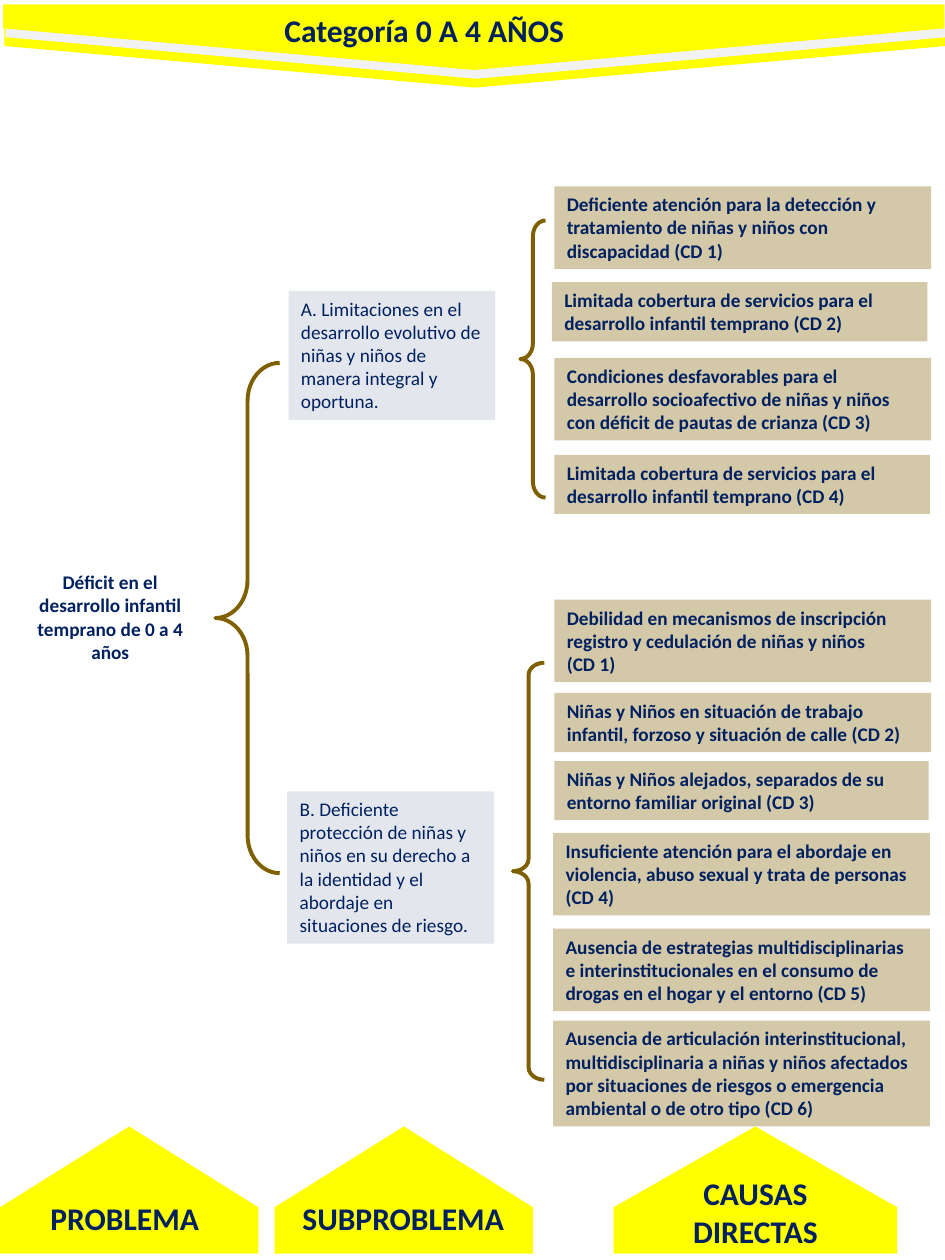
import dataclasses

import pptx
import pptx.dml.color
import pptx.enum.shapes
import pptx.enum.text
import pptx.oxml
import pptx.oxml.ns
import pptx.util

SHAPE = pptx.enum.shapes.MSO_SHAPE
ALIGN = pptx.enum.text.PP_ALIGN
ANCHOR = pptx.enum.text.MSO_ANCHOR
COLUMNS, ROWS = 75, 100


@dataclasses.dataclass(frozen=True)
class Theme:
    font: str = "Calibri"
    navy: str = "002060"
    brown: str = "7F6000"
    yellow: str = "FFFF00"
    pale: str = "F2F2F2"
    body: int = 11
    heading: int = 18
    brace_line: float = 2.25


class TreePage:
    """Places elements on a grid of 75 columns by 100 rows."""

    def __init__(self, deck, theme):
        self.theme = theme
        self.column = deck.slide_width / COLUMNS
        self.row = deck.slide_height / ROWS
        self.page = deck.slides.add_slide(deck.slide_layouts[6])

    def frame(self, left, top, width, height):
        return (round(left * self.column), round(top * self.row),
                round(width * self.column), round(height * self.row))

    def shape(self, kind, area, fill=None, opacity=100, adjustments=()):
        box = self.page.shapes.add_shape(kind, *self.frame(*area))
        box.shadow.inherit = False
        box.line.fill.background()
        for index, value in enumerate(adjustments):
            box.adjustments[index] = value
        if fill is None:
            box.fill.background()
            return box
        box.fill.solid()
        box.fill.fore_color.rgb = pptx.dml.color.RGBColor.from_string(fill)
        if opacity < 100:
            color = box.element.spPr.find(
                f'{pptx.oxml.ns.qn("a:solidFill")}/{pptx.oxml.ns.qn("a:srgbClr")}')
            color.append(pptx.oxml.parse_xml(
                f'<a:alpha {pptx.oxml.ns.nsdecls("a")} val="{opacity * 1000}"/>'))
        return box

    def add_text(self, box, text, size, bold=True, align=ALIGN.LEFT):
        body = box.text_frame
        for name, value in {"word_wrap": True, "vertical_anchor": ANCHOR.TOP}.items():
            setattr(body, name, value)
        style = {"name": self.theme.font, "size": pptx.util.Pt(size), "bold": bold}
        for index, line in enumerate(text.split("\n")):
            para = body.add_paragraph() if index else body.paragraphs[0]
            para.alignment = align
            span = para.add_run()
            span.text = line
            for name, value in style.items():
                setattr(span.font, name, value)
            span.font.color.rgb = pptx.dml.color.RGBColor.from_string(self.theme.navy)

    def label(self, area, text, size, align=ALIGN.CENTER):
        box = self.page.shapes.add_textbox(*self.frame(*area))
        self.add_text(box, text, size, align=align)

    def card(self, left, top, width, lines, text, fill, opacity, bold):
        area = (left, top, width, 1 + 1.85 * lines)
        box = self.shape(SHAPE.RECTANGLE, area, fill, opacity)
        self.add_text(box, text, self.theme.body, bold)

    def arrow(self, area, fill, rotation):
        """Draw a quarter-turned arrow that covers the given area."""
        left, top, width, height = area
        turned = (left + (width - height) / 2, top + (height - width) / 2, height, width)
        box = self.shape(SHAPE.RIGHT_ARROW, turned, fill, adjustments=(1, 0.635))
        box.rotation = rotation

    def brace(self, area, curve, middle):
        box = self.shape(SHAPE.LEFT_BRACE, area, adjustments=(curve, middle))
        box.line.color.rgb = pptx.dml.color.RGBColor.from_string(self.theme.brown)
        box.line.width = pptx.util.Pt(self.theme.brace_line)


# Left, top, width, text lines, text
SUBPROBLEMS = [
    (22.9, 23.1, 16.4, 5, "A. Limitaciones en el desarrollo evolutivo de niñas y niños "
     "de manera integral y oportuna."),
    (22.8, 62.8, 16.4, 6, "B. Deficiente protección de niñas y niños en su derecho a la "
     "identidad y el abordaje en situaciones de riesgo."),
]
CAUSES = [
    (44, 14.8, 29.9, 3, "Deficiente atención para la detección y tratamiento de niñas "
     "y niños con discapacidad (CD 1)"),
    (43.8, 22.4, 29.8, 2, "Limitada cobertura de servicios para el desarrollo infantil "
     "temprano (CD 2)"),
    (44, 28.4, 29.9, 3, "Condiciones desfavorables para el desarrollo socioafectivo de "
     "niñas y niños con déficit de pautas de crianza (CD 3)"),
    (44, 36.1, 29.8, 2, "Limitada cobertura de servicios para el desarrollo infantil "
     "temprano (CD 4)"),
    (44, 47.6, 29.9, 3, "Debilidad en mecanismos de inscripción registro y cedulación "
     "de niñas y niños\n(CD 1)"),
    (44, 55, 29.9, 2, "Niñas y Niños en situación de trabajo infantil, forzoso y "
     "situación de calle (CD 2)"),
    (44, 60.4, 29.7, 2, "Niñas y Niños alejados, separados de su entorno familiar "
     "original (CD 3)"),
    (43.9, 66.1, 29.9, 3, "Insuficiente atención para el abordaje en violencia, abuso "
     "sexual y trata de personas (CD 4)"),
    (43.9, 73.7, 29.9, 3, "Ausencia de estrategias multidisciplinarias e "
     "interinstitucionales en el consumo de drogas en el hogar y el entorno (CD 5)"),
    (43.9, 81, 29.9, 4, "Ausencia de articulación interinstitucional, multidisciplinaria "
     "a niñas y niños afectados por situaciones de riesgos o emergencia ambiental o de "
     "otro tipo (CD 6)"),
]
# Area, curve, position of the point
BRACES = [
    ((17.1, 28.8, 5.1, 40.5), 0.59, 0.5),
    ((41.3, 17.5, 2, 22), 0.62, 0.5),
    ((40.7, 52.6, 2.5, 33.1), 0.39, 0.5),
]
# Arrow left and width, label area, label
STAGES = [
    (0, 20.5, (1.4, 94.7, 17, 4), "PROBLEMA"),
    (21.8, 20.5, (22.4, 94.7, 19.2, 4), "SUBPROBLEMA"),
    (48.7, 22.5, (52.7, 92.7, 14.5, 7.1), "CAUSAS DIRECTAS"),
]


def main():
    deck = pptx.Presentation()
    deck.slide_width = pptx.util.Inches(7.5)
    deck.slide_height = pptx.util.Inches(10)
    theme = Theme()
    tree = TreePage(deck, theme)

    # Banner of stacked arrows and title
    for left, top, fill in [(0.35, 1.75, theme.yellow), (0.45, 1.05, theme.pale),
                            (0.25, 0.35, theme.yellow)]:
        tree.arrow((left, top, 74.7, 5.2), fill, 90)
    tree.label((21.6, 0.4, 31.7, 4), "Categoría 0 A 4 AÑOS", theme.heading, ALIGN.LEFT)

    # Problem, subproblems and direct causes
    tree.label((1.2, 44.8, 15.1, 8.4),
               "Déficit en el desarrollo infantil temprano de 0 a 4 años", theme.body)
    for card in SUBPROBLEMS:
        tree.card(*card, fill=theme.navy, opacity=11, bold=False)
    for card in CAUSES:
        tree.card(*card, fill=theme.brown, opacity=34, bold=True)
    for brace in BRACES:
        tree.brace(*brace)

    # Stage arrows along the foot
    for left, width, area, text in STAGES:
        tree.arrow((left, 89.4, width, 10.1), theme.yellow, 270)
        tree.label(area, text, theme.heading)

    deck.save("out.pptx")


if __name__ == "__main__":
    main()
